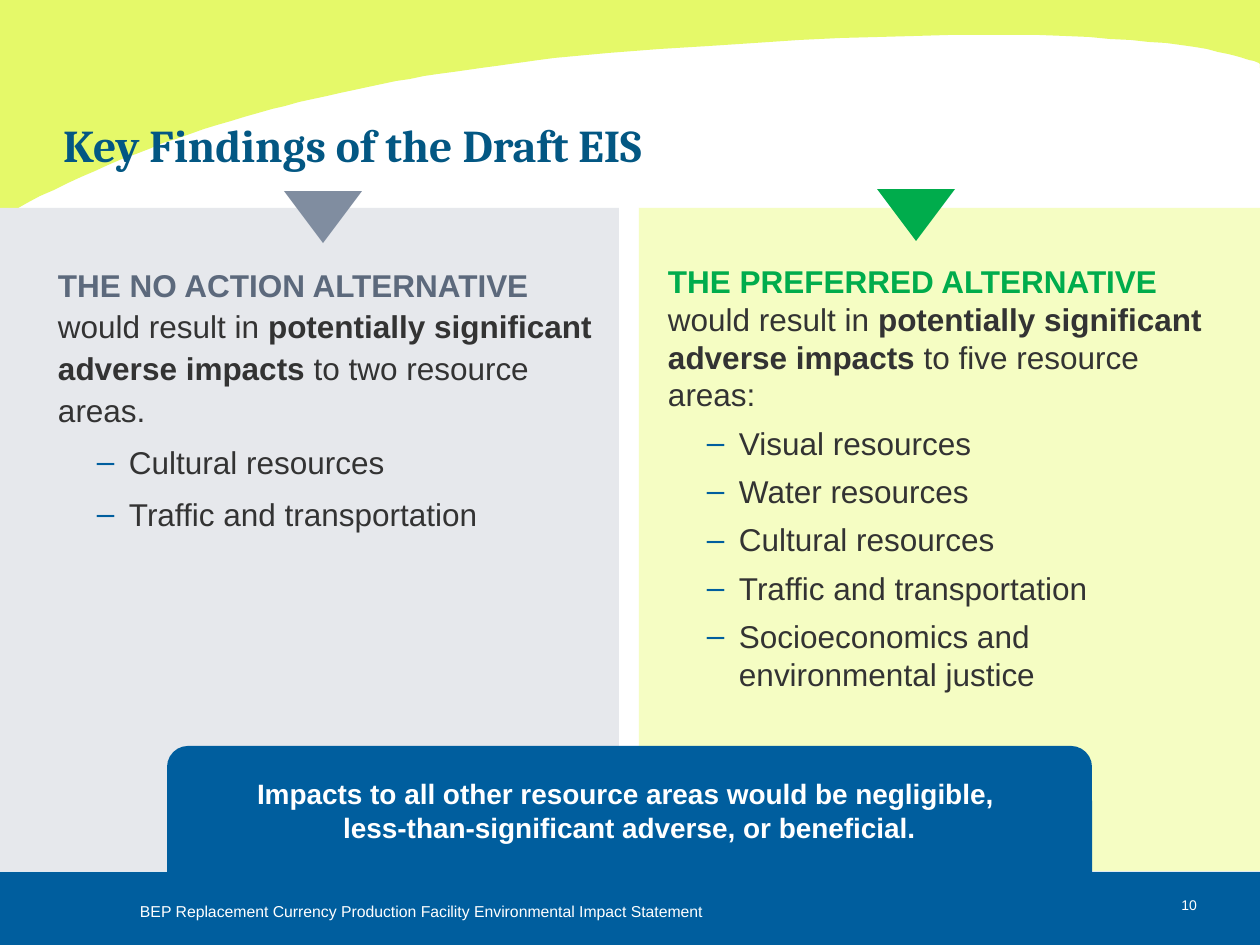
import pptx
import pptx.dml.color
import pptx.enum.shapes
import pptx.enum.text
import pptx.oxml
import pptx.oxml.ns
import pptx.util

SHAPE = pptx.enum.shapes.MSO_SHAPE
ALIGN = pptx.enum.text.PP_ALIGN
ANCHOR = pptx.enum.text.MSO_ANCHOR

# Content
TITLE = "Key Findings of the Draft EIS"
BANNER = ("Impacts to all other resource areas would be negligible, \v"
          "less-than-significant adverse, or beneficial.")
FOOTER = "BEP Replacement Currency Production Facility Environmental Impact Statement"
PAGE_NUMBER = "10"
IMPACTS = "potentially significant adverse impacts "
BLUE, WHITE, INK = "005E9E", "FFFFFF", "333333"
COLUMNS = [
    {"panel": (0, 208, 619, 663), "fill": "E6E8EC",
     "marker": (284, 191, 78, 52), "marker_fill": "808DA0",
     "body": (58, 256, 551, 593), "accent": "5C697C", "spacing": 1.1,
     "heading": "THE NO ACTION ALTERNATIVE", "end": "to two resource areas.",
     "items": ["Cultural resources", "Traffic and transportation"]},
    {"panel": (639, 208, 621, 663), "fill": "F5FDC3",
     "marker": (877, 189, 78, 52), "marker_fill": "00AC4C",
     "body": (668, 256, 551, 464), "accent": "00AC4C", "spacing": 1.0,
     "heading": "THE PREFERRED ALTERNATIVE", "end": "to five resource areas:",
     "items": ["Visual resources", "Water resources", "Cultural resources",
               "Traffic and transportation",
               "Socioeconomics and environmental justice"]},
]
# Lower edge of the swoosh: two Bezier curves, from right to left
SWOOSH = [[(1261, 60), (1283, 97), (1298, -10), (554, 58)],
          [(554, 58), (357, 82), (183, 117), (-1, 218)]]

SCALE = 914400 / 126


def px(value):
    return round(value * SCALE)


def rgb(color):
    return pptx.dml.color.RGBColor.from_string(color)


def paint(shape, color):
    shape.shadow.inherit = False
    shape.fill.solid()
    shape.fill.fore_color.rgb = rgb(color)
    shape.line.fill.background()
    return shape


def add_block(kind, area, color):
    return paint(page.shapes.add_shape(kind, *map(px, area)), color)


def place(box, area):
    box.left, box.top, box.width, box.height = map(px, area)


def set_frame(frame, margins=(0, 0, 0, 0), anchor=ANCHOR.TOP, wrap=True):
    frame.margin_left, frame.margin_top, frame.margin_right, frame.margin_bottom = map(px, margins)
    frame.vertical_anchor = anchor
    frame.word_wrap = wrap
    frame.auto_size = pptx.enum.text.MSO_AUTO_SIZE.NONE


def style(font, size, color, bold=False, name="Arial"):
    font.size = pptx.util.Pt(size)
    font.color.rgb = rgb(color)
    font.bold = bold
    font.name = name


def write(frame, text, size, color, bold=False, name="Arial", align=ALIGN.LEFT):
    frame.text = text
    para = frame.paragraphs[0]
    para.alignment = align
    for span in para.runs:
        style(span.font, size, color, bold, name)


def set_bullet(para, left, indent, bullet=None):
    props = para._p.get_or_add_pPr()
    props.set("marL", str(px(left)))
    props.set("indent", str(px(indent)))
    space = pptx.oxml.ns.nsdecls("a")
    parts = [f"<a:buNone {space}/>"]
    if bullet:
        parts = [f'<a:buClr {space}><a:srgbClr val="{BLUE}"/></a:buClr>',
                 f'<a:buFont {space} typeface="Arial"/>',
                 f'<a:buChar {space} char="{bullet}"/>']
    for part in parts:
        props.append(pptx.oxml.parse_xml(part))


def curve_points(curve, steps=40):
    for step in range(steps + 1):
        t = step / steps
        weights = ((1 - t) ** 3, 3 * t * (1 - t) ** 2, 3 * t * t * (1 - t), t ** 3)
        x, y = (sum(w * point[axis] for w, point in zip(weights, curve)) for axis in (0, 1))
        yield min(max(x, 0), 1260), y


deck = pptx.Presentation()
deck.slide_width, deck.slide_height = px(1260), px(945)
page = deck.slides.add_slide(deck.slide_layouts[3])
tree = page.shapes.element
title, *bodies = page.placeholders

# Swoosh and footer band
outline = page.shapes.build_freeform(0, 0, scale=SCALE)
edge = [point for curve in SWOOSH for point in curve_points(curve)]
outline.add_line_segments([(1260, 0)] + edge, close=True)
paint(outline.convert_to_shape(), "E5F969")
add_block(SHAPE.RECTANGLE, (0, 872, 1260, 73), BLUE)

for text, area, size, align, wrap in [
        (PAGE_NUMBER, (1108, 897, 89, 17), 8, ALIGN.RIGHT, True),
        (FOOTER, (140, 902, 585, 24), 9, ALIGN.LEFT, False)]:
    box = page.shapes.add_textbox(*map(px, area))
    set_frame(box.text_frame, wrap=wrap)
    write(box.text_frame, text, size, WHITE, align=align)

# Panels, then the placeholders in front of them
for column in COLUMNS:
    add_block(SHAPE.RECTANGLE, column["panel"], column["fill"])

tree.append(title.element)
place(title, (63, 81, 1197, 91))
set_frame(title.text_frame, anchor=ANCHOR.BOTTOM)
write(title.text_frame, TITLE, 26, "035783", True, "Cambria")

for column, body in zip(COLUMNS, bodies):
    tree.append(body.element)
    place(body, column["body"])
    frame = body.text_frame
    set_frame(frame, (0, 6, 13, 6))
    para = frame.paragraphs[0]
    para.line_spacing = column["spacing"]
    para.space_before = pptx.util.Pt(0)
    set_bullet(para, 0, 0)
    for text, color, bold in [(column["heading"], column["accent"], True),
                              (" would result in ", INK, False),
                              (IMPACTS, INK, True),
                              (column["end"], INK, False)]:
        span = para.add_run()
        span.text = text
        style(span.font, 18, color, bold)
    for item in column["items"]:
        para = frame.add_paragraph()
        para.text = item
        para.level = 1
        para.line_spacing = column["spacing"]
        para.space_before = pptx.util.Pt(6)
        set_bullet(para, 71, -32, "‒")
        style(para.runs[0].font, 18, INK)

# Banner and column markers
banner = add_block(SHAPE.ROUND_2_SAME_RECTANGLE, (167, 746, 925, 126), BLUE)
set_frame(banner.text_frame, (13, 0, 13, 3), ANCHOR.MIDDLE)
write(banner.text_frame, BANNER, 16, WHITE, True, align=ALIGN.CENTER)
for column in COLUMNS:
    marker = add_block(SHAPE.ISOSCELES_TRIANGLE, column["marker"], column["marker_fill"])
    marker.rotation = 180

deck.save("out.pptx")
